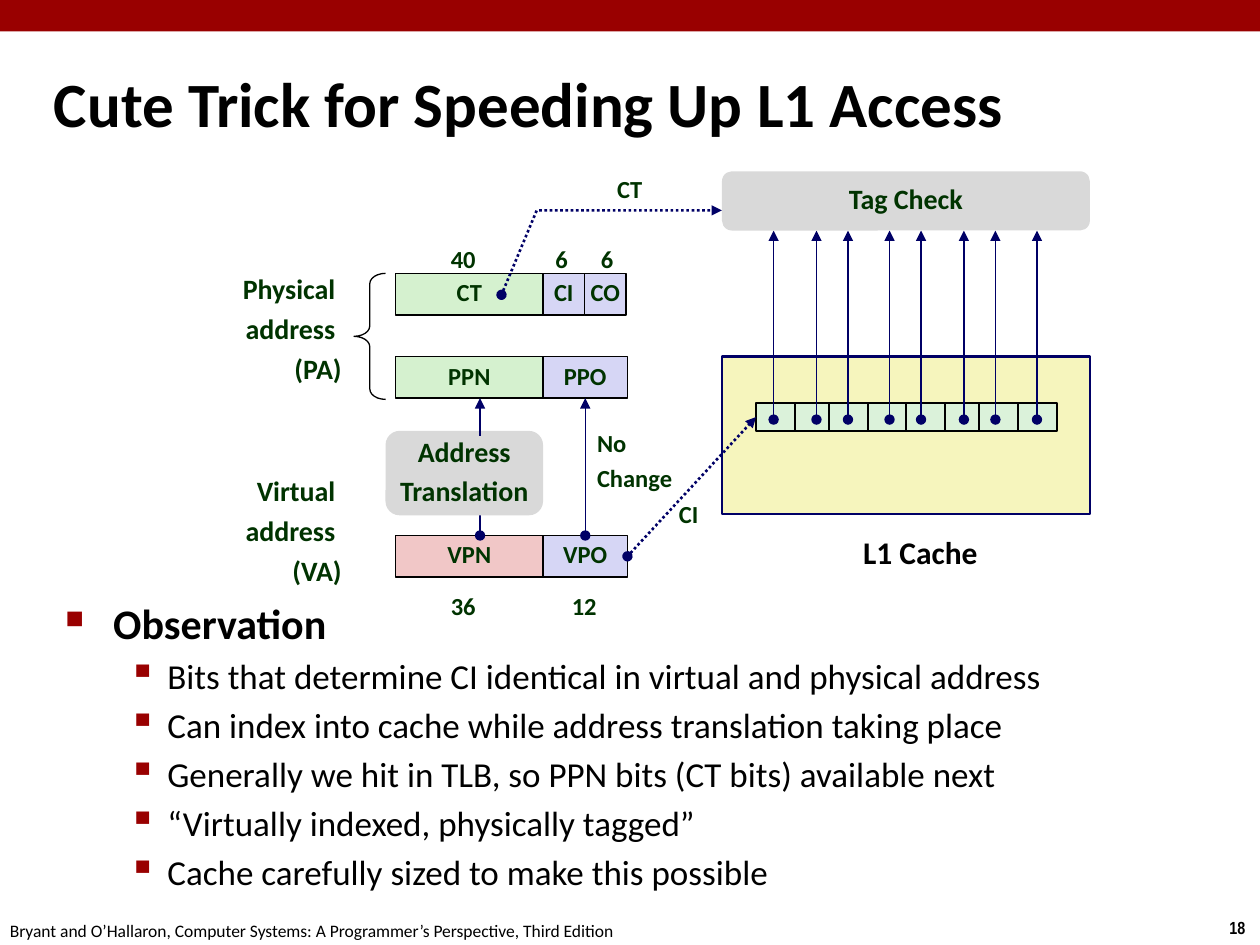
from collections import namedtuple
from itertools import product

from lxml.etree import SubElement
from pptx import Presentation
from pptx.dml.color import RGBColor
from pptx.enum.dml import MSO_LINE
from pptx.enum.shapes import MSO_CONNECTOR, MSO_SHAPE
from pptx.enum.text import MSO_ANCHOR, PP_ALIGN
from pptx.oxml.ns import qn
from pptx.util import Inches, Pt

Box = namedtuple("Box", "left top width height")
TOP, LEFT, BOTTOM, RIGHT = range(4)

RED, BLACK, NAVY, DARK_GREEN = "990000", "000000", "000066", "003300"
GREEN, LAVENDER, PINK = "D5F1CF", "D6D6F5", "F1C7C7"
GRAY, YELLOW, MINT = "D9D9D9", "F6F5BD", "DBF2DA"

LABEL = {"line_spacing": 0.88, "space_before": Pt(5.2)}
CENTERED = {**LABEL, "alignment": PP_ALIGN.CENTER}
ADDRESS = {**LABEL, "space_before": Pt(6), "alignment": PP_ALIGN.RIGHT}


def color(value):
    return RGBColor.from_string(value)


def inches(values):
    return [Inches(value) for value in values]


def write(frame, lines, size, ink=DARK_GREEN, bold=True, font="Calibri",
          layout=LABEL, wrap=False):
    frame.word_wrap = wrap
    for index, line in enumerate(lines):
        paragraph = frame.paragraphs[0] if index == 0 else frame.add_paragraph()
        for name, value in layout.items():
            setattr(paragraph, name, value)
        run = paragraph.add_run()
        run.text = line
        for name, value in {"name": font, "size": Pt(size), "bold": bold}.items():
            setattr(run.font, name, value)
        run.font.color.rgb = color(ink)


def add_text(slide, box, lines, size=14, **style):
    label = slide.shapes.add_textbox(*inches(box))
    write(label.text_frame, lines, size, **style)
    return label


def add_block(slide, box, fill=None, line=None, weight=0.75,
              kind=MSO_SHAPE.RECTANGLE, lines=(), size=14):
    block = slide.shapes.add_shape(kind, *inches(box))
    block.shadow.inherit = False
    if fill:
        block.fill.solid()
        block.fill.fore_color.rgb = color(fill)
    else:
        block.fill.background()
    if line:
        block.line.color.rgb = color(line)
        block.line.width = Pt(weight)
    else:
        block.line.fill.background()
    if lines:
        block.text_frame.vertical_anchor = MSO_ANCHOR.MIDDLE
        write(block.text_frame, lines, size, layout=CENTERED)
    return block


def style_arrow(arrow, dotted=False, dot=True):
    arrow.line.color.rgb = color(NAVY)
    arrow.line.width = Pt(1.5 if dotted else 0.75)
    if dotted:
        arrow.line.dash_style = MSO_LINE.ROUND_DOT
    properties = arrow.line._get_or_add_ln()
    if dot:
        SubElement(properties, qn("a:headEnd"), type="oval")
    SubElement(properties, qn("a:tailEnd"), type="triangle")


def add_arrow(slide, start, end, **style):
    arrow = slide.shapes.add_connector(MSO_CONNECTOR.STRAIGHT, *inches(start + end))
    style_arrow(arrow, **style)
    SubElement(arrow._element.spPr, qn("a:effectLst"))
    return arrow


def join(slide, source, source_side, target, target_side, **style):
    arrow = add_arrow(slide, (0, 0), (0, 0), **style)
    arrow.begin_connect(source, source_side)
    arrow.end_connect(target, target_side)


def add_bullet(paragraph, character, scale, margin, hanging):
    properties = paragraph._p.get_or_add_pPr()
    properties.set("marL", str(Inches(margin)))
    properties.set("indent", str(-Inches(hanging)))
    ink = SubElement(properties, qn("a:buClr"))
    SubElement(ink, qn("a:srgbClr"), val=RED)
    SubElement(properties, qn("a:buSzPct"), val=str(scale * 1000))
    SubElement(properties, qn("a:buChar"), char=character)


def add_frame(slide, box):
    """Top band, page number, source line and title."""
    add_block(slide, Box(0, 0, box.width, 0.25), RED)
    add_text(slide, Box(box.width - 0.34, 7.23, 0.34, 0.27), ["18"], 10,
             ink=BLACK, font="Arial Narrow", layout={})
    add_text(slide, Box(-0.02, 7.25, 5.08, 0.27),
             ["Bryant and O’Hallaron, Computer Systems: "
              "A Programmer’s Perspective, Third Edition"],
             10, ink=BLACK, bold=False, layout={})
    title = add_text(slide, Box(0.33, 0.5, 8.67, 0.63),
                     ["Cute Trick for Speeding Up L1 Access"], 36,
                     ink=BLACK, layout={}, wrap=True)
    title.text_frame.vertical_anchor = MSO_ANCHOR.MIDDLE


def add_fields(slide, left, top, fields):
    """One address: adjoining bit fields of (name, width, fill)."""
    blocks = []
    for name, width, fill in fields:
        blocks.append(add_block(slide, Box(left, top, width, 0.33), fill, BLACK,
                                lines=[name]))
        left += width
    return blocks


def add_addresses(slide, box):
    """Physical and virtual addresses; returns the VPO field."""
    left, top = box.left, box.top
    fields = left + 1.5
    split = fields + 1.17

    # Address names and bit counts
    for name, offset in (("Physical ", -0.03), ("Virtual ", 1.57)):
        short = f"({name[0]}A)"
        add_text(slide, Box(left, top + offset, 1.17, 0.98),
                 [name, "address ", short], 16, layout=ADDRESS, wrap=True)
    for count, x, y, width in (("40", 3.48, 1.92, 0.4), ("6", 4.31, 1.92, 0.3),
                               ("6", 4.67, 1.92, 0.3), ("36", 3.48, 4.67, 0.4),
                               ("12", 4.44, 4.67, 0.4)):
        add_text(slide, Box(left + x - 1.64, top + y - 2.17, width, 0.31), [count])
    add_block(slide, Box(left + 1.17, top, 0.25, 1), line=BLACK,
              kind=MSO_SHAPE.LEFT_BRACE).adjustments[0] = 0.33

    # Bit fields
    add_fields(slide, fields, top, [("CT", 1.17, GREEN), ("CI", 0.33, LAVENDER),
                                    ("CO", 0.33, LAVENDER)])
    _, ppo = add_fields(slide, fields, top + 0.66,
                        [("PPN", 1.17, GREEN), ("PPO", 0.67, LAVENDER)])
    _, vpo = add_fields(slide, fields, top + 2.08,
                        [("VPN", 1.17, PINK), ("VPO", 0.67, LAVENDER)])

    # Translation from virtual to physical
    middle = fields + 0.67
    add_arrow(slide, (middle, top + 2.08), (middle, top + 1.83))
    add_block(slide, Box(fields - 0.08, top + 1.25, 1.25, 0.67), GRAY,
              kind=MSO_SHAPE.ROUNDED_RECTANGLE,
              lines=["Address", "Translation"], size=16)
    add_arrow(slide, (middle, top + 1.29), (middle, top + 0.99), dot=False)
    join(slide, vpo, TOP, ppo, BOTTOM)
    add_text(slide, Box(split + 0.33, top + 1.21, 0.8, 0.59), ["No", "Change"])
    return vpo


def add_cache(slide, box):
    """Tag check above the L1 cache; returns the first cache cell."""
    left, top, width, height = box
    cache_top = top + 1.47
    add_block(slide, Box(left, cache_top, width, height - 1.47), YELLOW, NAVY, 1.5)
    add_text(slide, Box(left + 0.91, top + 2.82, 1.33, 0.4), ["L1 Cache"], 18,
             ink=BLACK, layout={"alignment": PP_ALIGN.CENTER}, wrap=True)
    cells = [add_block(slide, Box(left + 0.27 + half + offset, cache_top + 0.37, 0.31, 0.22),
                       MINT, BLACK, 1)
             for half, offset in product((0, 1.19), (0, 0.31, 0.58, 0.89))]
    for half, offset in product((0, 1.17), (0, 0.34, 0.59, 0.92)):
        x = left + 0.41 + half + offset
        add_arrow(slide, (x, cache_top + 0.5), (x, top + 0.47))
    add_block(slide, Box(left, top, width, 0.47), GRAY,
              kind=MSO_SHAPE.ROUNDED_RECTANGLE, lines=["Tag Check"], size=16)
    return cells[0]


def add_lookup(slide, box, vpo, first_cell):
    """Dotted paths that carry the CT and CI bits to the cache."""
    left, top, width, height = box
    join(slide, vpo, RIGHT, first_cell, LEFT, dotted=True)
    add_text(slide, Box(left + 1.31, top + 2.27, 0.36, 0.31), ["CI"])
    builder = slide.shapes.build_freeform(*inches((left, top + height)))
    builder.add_line_segments([inches((left + 0.28, top)),
                               inches((left + width, top))], close=False)
    tag_path = builder.convert_to_shape()
    tag_path.shadow.inherit = False
    tag_path.fill.background()
    style_arrow(tag_path, dotted=True)
    add_text(slide, Box(left + 0.82, top - 0.31, 0.4, 0.31), ["CT"])


def add_observation(slide, box):
    """Heading bullet with its points."""
    frame = add_text(slide, box, ["Observation"], 24, ink=BLACK,
                     layout={"space_before": Pt(4.8)}, wrap=True).text_frame
    add_bullet(frame.paragraphs[0], "■", 60, 0.38, 0.38)
    for point in ("Bits that determine CI identical in virtual and physical address",
                  "Can index into cache while address translation taking place",
                  "Generally we hit in TLB, so PPN bits (CT bits) available next",
                  "“Virtually indexed, physically tagged”",
                  "Cache carefully sized to make this possible"):
        paragraph = frame.add_paragraph()
        paragraph.level = 1
        paragraph.space_before = Pt(4)
        add_bullet(paragraph, "▪", 110, 0.81, 0.31)
        run = paragraph.add_run()
        run.text = point
        for name, value in {"name": "Calibri", "size": Pt(20), "bold": False}.items():
            setattr(run.font, name, value)
        run.font.color.rgb = color(BLACK)


def main():
    deck = Presentation()
    deck.slide_width, deck.slide_height = Inches(10), Inches(7.5)
    slide = deck.slides.add_slide(deck.slide_layouts[6])
    add_frame(slide, Box(0, 0, 10, 7.5))
    add_observation(slide, Box(0.42, 4.69, 9.35, 2.56))
    vpo = add_addresses(slide, Box(1.64, 2.17, 3.34, 2.81))
    first_cell = add_cache(slide, Box(5.73, 1.36, 2.92, 2.72))
    add_lookup(slide, Box(3.98, 1.67, 1.75, 0.67), vpo, first_cell)
    deck.save("out.pptx")


if __name__ == "__main__":
    main()
